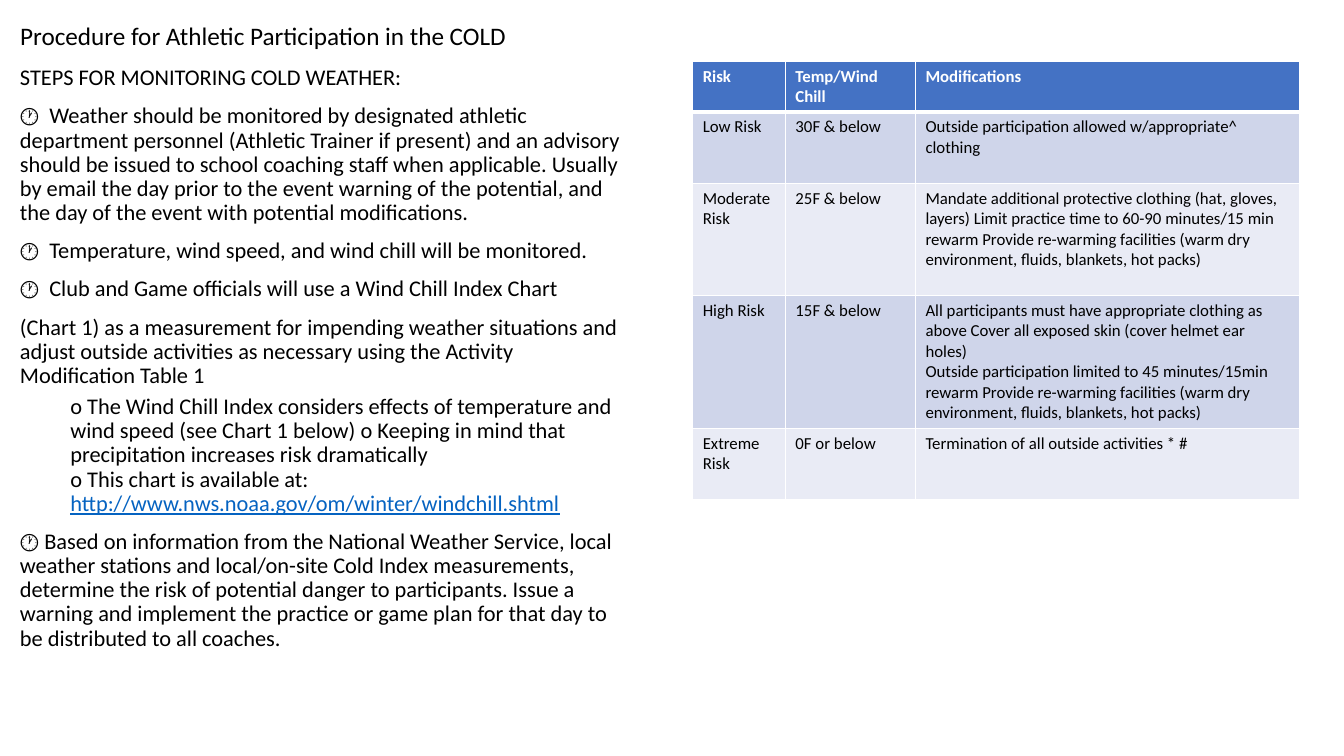
"""Build a slide on athletic participation in cold weather."""
import copy

import pptx
import pptx.dml.color
import pptx.enum.text
import pptx.oxml
import pptx.oxml.ns
import pptx.util

Inches = pptx.util.Inches
Pt = pptx.util.Pt
RGBColor = pptx.dml.color.RGBColor

BLACK = RGBColor(0x00, 0x00, 0x00)
WHITE = RGBColor(0xFF, 0xFF, 0xFF)
LINK_BLUE = RGBColor(0x05, 0x63, 0xC1)
HEADER_BLUE = RGBColor(0x44, 0x72, 0xC4)
BANDS = (RGBColor(0xCF, 0xD5, 0xEA), RGBColor(0xE9, 0xEB, 0xF5))

TITLE = "Procedure for Athletic Participation in the COLD"
WIND_CHILL_NOTE = (
    "o The Wind Chill Index considers effects of temperature and wind speed (see Chart 1 below) "
    "o Keeping in mind that precipitation increases risk dramatically\n"
    "o This chart is available at: "
)
WIND_CHILL_ADDRESS = "http://www.nws.noaa.gov/om/winter/windchill.shtml"
STEPS = [
    (0, [("STEPS FOR MONITORING COLD WEATHER:", {})]),
    (0, [("🕐  Weather should be monitored by designated athletic department personnel "
          "(Athletic Trainer if present) and an advisory should be issued to school coaching "
          "staff when applicable. Usually by email the day prior to the event warning of the "
          "potential, and the day of the event with potential modifications.", {})]),
    (0, [("🕐  Temperature, wind speed, and wind chill will be monitored.", {})]),
    (0, [("🕐  Club and Game officials will use a Wind Chill Index Chart", {})]),
    (0, [("(Chart 1) as a measurement for impending weather situations and adjust outside "
          "activities as necessary using the Activity Modification Table 1", {})]),
    (1, [(WIND_CHILL_NOTE, {}),
         (WIND_CHILL_ADDRESS, {"color": LINK_BLUE, "underline": True})]),
    (0, [("🕐 Based on information from the National Weather Service, local weather stations "
          "and local/on-site Cold Index measurements, determine the risk of potential danger to "
          "participants. Issue a warning and implement the practice or game plan for that day to "
          "be distributed to all coaches.", {})]),
]
RISKS = [
    ("Risk", "Temp/Wind Chill", "Modifications"),
    ("Low Risk", "30F & below", "Outside participation allowed w/appropriate^ clothing"),
    ("Moderate Risk", "25F & below",
     "Mandate additional protective clothing (hat, gloves, layers) Limit practice time to 60-90 "
     "minutes/15 min rewarm Provide re-warming facilities (warm dry environment, fluids, "
     "blankets, hot packs)"),
    ("High Risk", "15F & below",
     "All participants must have appropriate clothing as above Cover all exposed skin (cover "
     "helmet ear holes)\nOutside participation limited to 45 minutes/15min rewarm Provide "
     "re-warming facilities (warm dry environment, fluids, blankets, hot packs)"),
    ("Extreme Risk", "0F or below", "Termination of all outside activities * #"),
]
COLUMN_WIDTHS = (0.92, 1.29, 3.81)
ROW_HEIGHTS = (0.5, 0.71, 1.11, 1.32, 0.71)


class SlideBuilder:
    def __init__(self, page):
        self.page = page
        self.style = {"name": "Calibri", "color": BLACK}

    def place(self, shape, bounds):
        for name, value in zip(("left", "top", "width", "height"), bounds):
            setattr(shape, name, Inches(value))

    def add_text(self, para, text, **changes):
        for index, line in enumerate(text.split("\n")):
            if index:
                para.add_line_break()
                line_break = para._p[-1]
                line_break.append(copy.deepcopy(span.font._element))
            span = para.add_run()
            span.text = line
            for name, value in {**self.style, **changes}.items():
                if name == "color":
                    span.font.color.rgb = value
                else:
                    setattr(span.font, name, value)

    def title(self, text, bounds):
        box = self.page.shapes.title
        self.place(box, bounds)
        box.text_frame.vertical_anchor = pptx.enum.text.MSO_ANCHOR.MIDDLE
        para = box.text_frame.paragraphs[0]
        para.alignment = pptx.enum.text.PP_ALIGN.LEFT
        para.line_spacing = 0.9
        self.add_text(para, text, size=Pt(18))

    def body(self, steps, bounds):
        box = self.page.shapes.add_textbox(*map(Inches, bounds))
        frame = box.text_frame
        frame.word_wrap = True
        for index, (level, spans) in enumerate(steps):
            para = frame.add_paragraph() if index else frame.paragraphs[0]
            spacing = Pt(5 if level else 10) if index else Pt(0)
            for name, value in {"level": level, "line_spacing": 0.9,
                                "space_before": spacing}.items():
                setattr(para, name, value)
            para._p.get_or_add_pPr().set("marL", str(Inches(0.5 * level)))
            for text, changes in spans:
                self.add_text(para, text, size=Pt(16), **changes)

    def border(self, cell, side, points):
        line = pptx.oxml.parse_xml(
            f'<a:{side} {pptx.oxml.ns.nsdecls("a")} w="{Pt(points)}">'
            f'<a:solidFill><a:srgbClr val="{WHITE}"/></a:solidFill></a:{side}>')
        cell._tc.get_or_add_tcPr().append(line)

    def table(self, rows, bounds):
        frame = self.page.shapes.add_table(len(rows), len(rows[0]), *map(Inches, bounds))
        grid = frame.table
        for column, width in zip(grid.columns, COLUMN_WIDTHS):
            column.width = Inches(width)
        for row, height in zip(grid.rows, ROW_HEIGHTS):
            row.height = Inches(height)
        for row_index, texts in enumerate(rows):
            header = row_index == 0
            for column_index, text in enumerate(texts):
                cell = grid.cell(row_index, column_index)
                for side in ("lnL", "lnR", "lnT", "lnB"):
                    thick = (header and side == "lnB") or (row_index == 1 and side == "lnT")
                    self.border(cell, side, 3 if thick else 1)
                cell.fill.solid()
                cell.fill.fore_color.rgb = HEADER_BLUE if header else BANDS[(row_index - 1) % 2]
                self.add_text(cell.text_frame.paragraphs[0], text, size=Pt(12), bold=header,
                              color=WHITE if header else BLACK)


def main():
    deck = pptx.Presentation()
    deck.slide_width = Inches(13.33)
    deck.slide_height = Inches(7.5)
    builder = SlideBuilder(deck.slides.add_slide(deck.slide_layouts[5]))
    builder.title(TITLE, (0.1, 0.14, 11.5, 0.47))
    builder.body(STEPS, (0.1, 0.61, 6.27, 5.96))
    builder.table(RISKS, (6.87, 0.61, sum(COLUMN_WIDTHS), sum(ROW_HEIGHTS)))
    deck.save("out.pptx")


if __name__ == "__main__":
    main()
